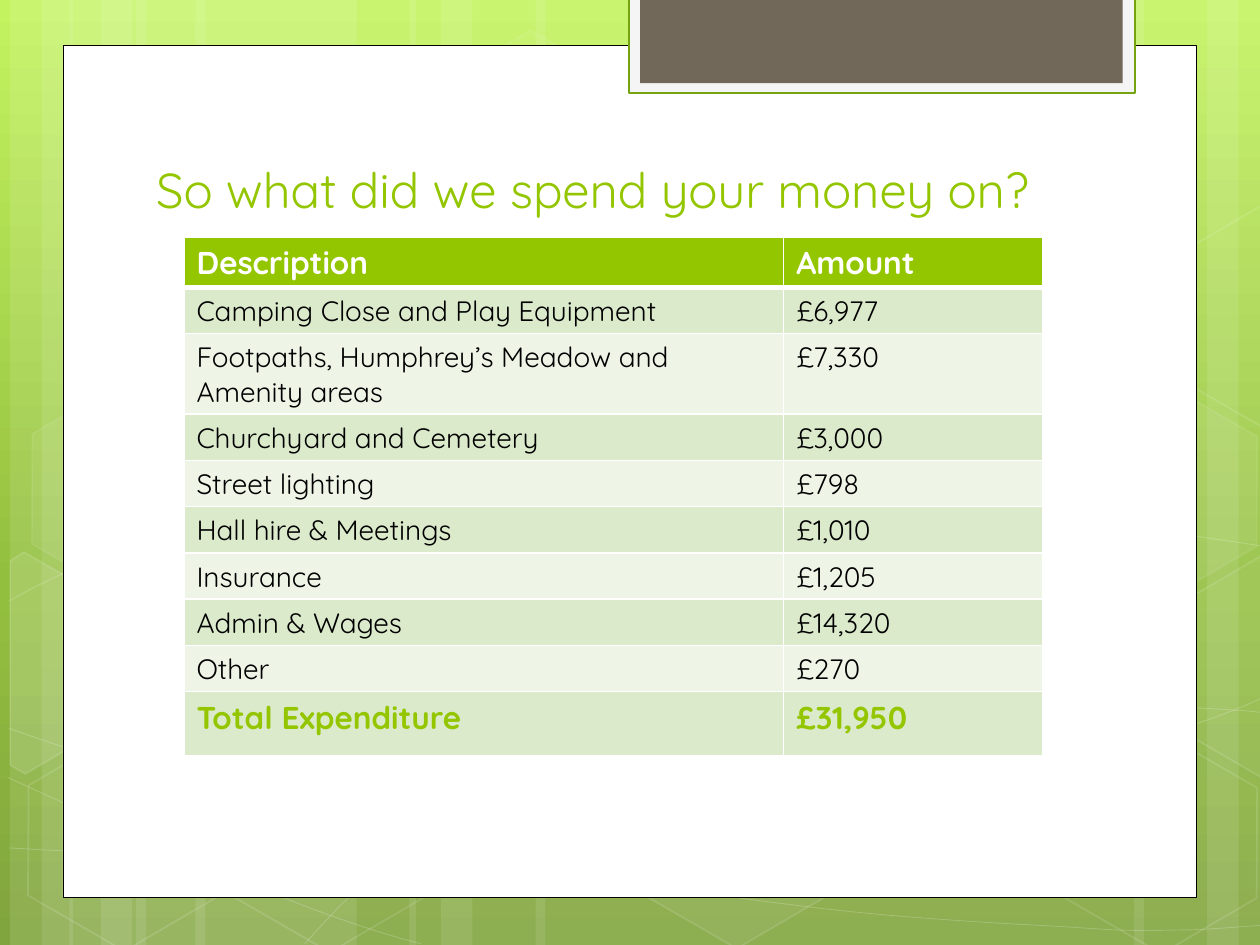
from copy import deepcopy
from math import cos, radians, sin
from lxml.etree import SubElement
from pptx import Presentation
from pptx.dml.color import RGBColor as Rgb
from pptx.enum.shapes import MSO_SHAPE as Kind
from pptx.enum.text import MSO_ANCHOR as Anchor
from pptx.oxml.ns import qn
from pptx.util import Inches, Pt

WHITE, LIME = "FFFFFF", "94C600"
FACE = "Quicksand"


def tint(fill, color, alpha=100):
    fill.solid()
    fill.fore_color.rgb = Rgb.from_string(color)
    if alpha < 100:
        node = fill._xPr.find(qn("a:solidFill"))[0]
        SubElement(node, qn("a:alpha")).set("val", str(alpha * 1000))


def dress(shape, fill=None, line=None):
    shape.shadow.inherit = False
    if fill:
        tint(shape.fill, *fill)
    else:
        shape.fill.background()
    if line:
        tint(shape.line.fill, *line[1:])
        shape.line.width = Pt(line[0])
    else:
        shape.line.fill.background()


deck = Presentation()
deck.slide_width, deck.slide_height = Inches(10), Inches(7.5)
unit = deck.slide_width // 1000
slide = deck.slides.add_slide(deck.slide_layouts[6])
shapes = slide.shapes

back = slide.background.fill
back.gradient()
back.gradient_angle = 270
stops = back._xPr.find(qn("a:gradFill")).find(qn("a:gsLst"))
stops.append(deepcopy(stops[-1]))
shades = [(0, "C3F35F"), (0.62, "93BF3F"), (1, "81A53E")]
for stop, (place, color) in zip(back.gradient_stops, shades):
    stop.position = place
    stop.color.rgb = Rgb.from_string(color)

bands = [(108, 175, 0), (8, 50, 0), (33, 83, 0), (155, 175, 0), (55, 50, 0),
         (80, 83, 0), (733, 175, 180), (958, 50, 180), (900, 83, 180),
         (425, 308, 0), (325, 50, 0), (350, 83, 0)]
for left, width, turn in bands:
    band = shapes.add_shape(Kind.RECTANGLE, left * unit, 0, width * unit, 750 * unit)
    band.rotation = turn
    dress(band, (WHITE, 10))

waves = [
    [(7, 673), (61, 676), (115, 679), (190, 678), (265, 677), (358, 675), (458, 665),
     (558, 655), (700, 636), (792, 617), (883, 598), (977, 568), (1007, 551)],
    [(7, 477), (36, 461), (65, 446), (121, 431), (178, 416), (259, 394), (347, 387),
     (436, 380), (544, 379), (654, 387), (764, 395), (947, 426), (1007, 434)],
    [(6, 617), (127, 672), (247, 727), (334, 749)],
    [(7, 578), (38, 589), (70, 600), (128, 616), (186, 631), (273, 656), (357, 673),
     (440, 690), (545, 708), (628, 718), (711, 729), (800, 733), (853, 736),
     (905, 740), (919, 738), (945, 738), (971, 737), (989, 735), (1007, 734)],
    [(242, 749), (260, 729), (278, 709), (302, 691), (326, 673), (360, 653), (388, 639),
     (416, 625), (433, 619), (470, 609), (506, 599), (573, 585), (608, 578),
     (644, 571), (649, 571), (680, 569), (711, 566), (760, 563), (794, 562),
     (829, 561), (886, 562), (886, 562), (953, 562),
     (971, 563), (988, 564), (997, 565), (1006, 566), (1003, 565), (1006, 566)],
]
for wave in waves:
    first, *rest = [(x * unit, y * unit) for x, y in wave]
    path = shapes.build_freeform(*first)
    path.add_line_segments(rest, close=False)
    curve = path.convert_to_shape()
    dress(curve, line=(0.5, WHITE, 20))
    track = next(curve._element.iter(qn("a:path")))
    legs = list(track)[1:]
    straight = 21 if len(legs) % 3 else len(legs)
    starts = [*range(0, straight, 3), *range(straight + 1, len(legs), 3)]
    for n in starts:
        bend = SubElement(track, qn("a:cubicBezTo"))
        legs[n].addprevious(bend)
        for leg in legs[n:n + 3]:
            bend.append(leg[0])
            track.remove(leg)

cells = [(334, 36, 4, 8), (497, 589, 6, 12), (11, 591, 0, 12), (14, 312, 7, 8),
         (174, 592, 0, 12), (753, 453, 10, 12), (834, 593, 0, 12), (834, 314, 7, 8)]
for left, top, fill, edge in cells:
    cell = shapes.add_shape(Kind.HEXAGON, left * unit, top * unit, 175 * unit, 152 * unit)
    cell.rotation = 30
    cell.adjustments[0] = 0.285
    dress(cell, (WHITE, fill) if fill else None, (1, WHITE, edge))

cuts = [
    (10, (36, 535), [(8, 445), (19, 438), (96, 482), (95, 570), (20, 614), (8, 607)]),
    (4, (985, 520), [(926, 485), (1001, 441), (1009, 446), (1009, 613),
                     (1002, 617), (926, 573)]),
    (0, (985, 241), [(926, 207), (1001, 163), (1010, 168), (1009, 335),
                     (1002, 339), (926, 295)]),
]
turn = radians(30)
for fill, (mid, row), dots in cuts:
    first, *rest = [
        (unit * (mid + (x - mid) * cos(turn) + (y - row) * sin(turn)),
         unit * (row - (x - mid) * sin(turn) + (y - row) * cos(turn)))
        for x, y in dots]
    path = shapes.build_freeform(*first)
    path.add_line_segments(rest, close=True)
    cut = path.convert_to_shape()
    cut.rotation = 30
    dress(cut, (WHITE, fill) if fill else None, (1, WHITE, 12))

panes = [((50, 36, 900, 676), WHITE, (0.5, "000000")),
         ((499, -2, 402, 76), "F5F5F5", (1.25, "74A510")),
         ((508, -2, 383, 68), "71685A", None)]
for spot, fill, line in panes:
    pane = shapes.add_shape(Kind.RECTANGLE, *[n * unit for n in spot])
    dress(pane, (fill,), line)

frame = shapes.add_textbox(*[n * unit for n in (114, 112, 768, 66)]).text_frame
frame.word_wrap = True
frame.vertical_anchor = Anchor.BOTTOM
frame.text = "So what did we spend your money on?"
font = frame.paragraphs[0].runs[0].font
for name, value in {"name": FACE, "size": Pt(28)}.items():
    setattr(font, name, value)
tint(font.fill, LIME)

rows = [
    ("Description", "Amount"),
    ("Camping Close and Play Equipment", "£6,977"),
    ("Footpaths, Humphrey’s Meadow and Amenity areas", "£7,330"),
    ("Churchyard and Cemetery", "£3,000"),
    ("Street lighting", "£798"),
    ("Hall hire & Meetings", "£1,010"),
    ("Insurance", "£1,205"),
    ("Admin & Wages", "£14,320"),
    ("Other", "£270"),
    ("Total Expenditure", "£31,950"),
]
last = len(rows) - 1
tall = {2: 64, last - 1: 13, last: 51}
plain = {"name": FACE, "size": Pt(16), "bold": False}
strong = {"name": FACE, "size": Pt(18), "bold": True}
inks = {0: WHITE, last: LIME}
holder = shapes.add_table(len(rows), 2, *[n * unit for n in (146, 188, 682, 412)])
grid = holder.table
for col, width in zip(grid.columns, (476, 206)):
    col.width = width * unit
for r, row in enumerate(rows):
    grid.rows[r].height = tall.get(r, 36) * unit
    for c, text in enumerate(row):
        cell = grid.cell(r, c)
        cell.text = text
        tint(cell.fill, LIME if r == 0 else "DCEACC" if r % 2 else "EEF5E7")
        font = cell.text_frame.paragraphs[0].runs[0].font
        for name, value in (strong if r in inks else plain).items():
            setattr(font, name, value)
        tint(font.fill, inks.get(r, "000000"))
        props = cell._tc.get_or_add_tcPr()
        for n, side in enumerate("LRTB"):
            thick = (r, side) in ((0, "B"), (1, "T"))
            edge = SubElement(props, qn("a:ln" + side), w=str(Pt(3 if thick else 1)))
            ink = SubElement(edge, qn("a:solidFill"))
            SubElement(ink, qn("a:srgbClr"), val=WHITE)
            props.insert(n, edge)
holder.height = 412 * unit

deck.save("out.pptx")
